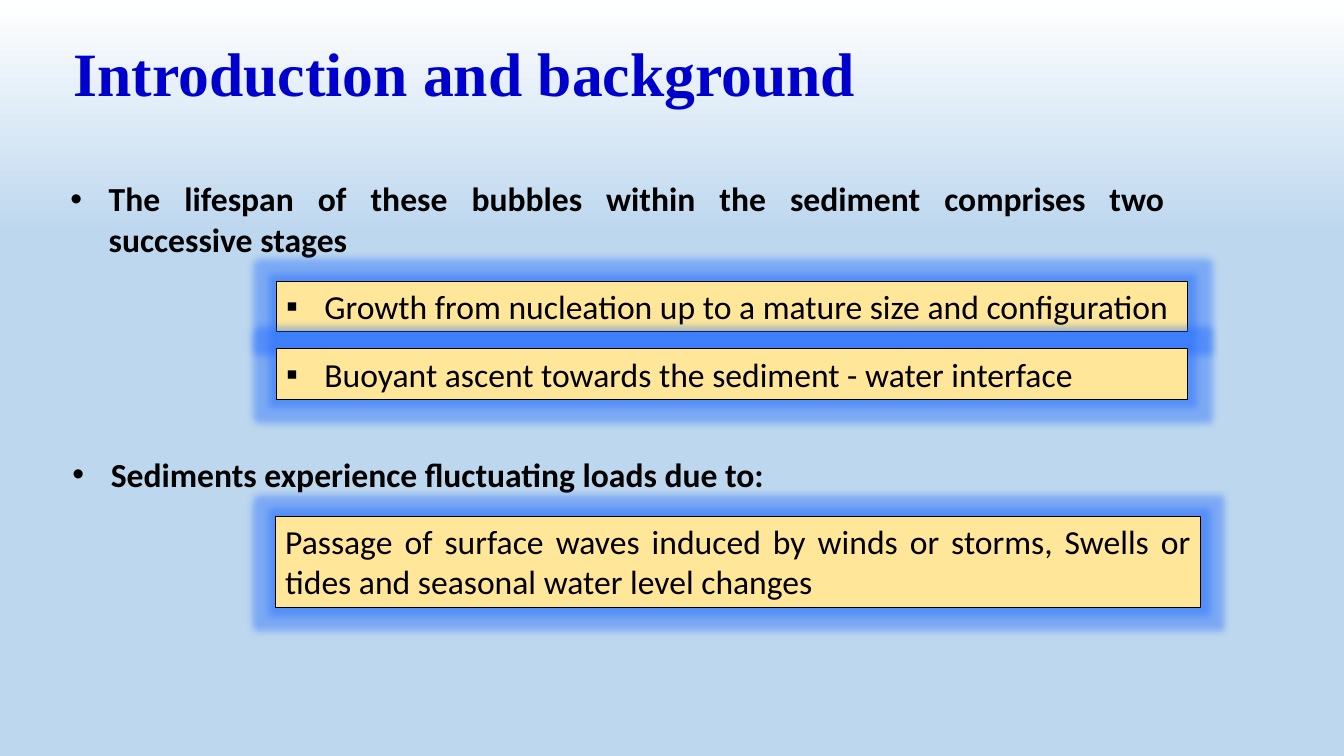
from lxml.etree import SubElement
from pptx import Presentation
from pptx.dml.color import RGBColor
from pptx.enum.shapes import MSO_SHAPE
from pptx.enum.text import MSO_ANCHOR, PP_ALIGN
from pptx.oxml.ns import qn
from pptx.util import Pt

EMU_PER_PX = 9144  # 100 px to the inch
BODY_SIZE = 24
BULLET_INDENT = 38
STAGE_TOP, STAGE_STEP = 279, 67
STAGES = [
    ("Growth from nucleation up to a mature size and configuration", PP_ALIGN.LEFT),
    ("Buoyant ascent towards the sediment - water interface", PP_ALIGN.JUSTIFY),
]


def px(length):
    return length * EMU_PER_PX


def color(hex_string):
    return RGBColor.from_string(hex_string)


def paint_background(page):
    fill = page.background.fill
    fill.gradient()
    fill.gradient_angle = 270
    for stop, (position, shade) in zip(fill.gradient_stops, [(0, "FFFFFF"), (0.31, "BDD7EE")]):
        stop.position = position
        stop.color.rgb = color(shade)


def add_bullet(para, symbol):
    properties = para._p.get_or_add_pPr()
    properties.set("marL", str(px(BULLET_INDENT)))
    properties.set("indent", str(-px(BULLET_INDENT)))
    SubElement(properties, qn("a:buFont"), typeface="Arial")
    SubElement(properties, qn("a:buChar"), char=symbol)


def write_text(box, text, size=BODY_SIZE, font="Calibri", shade="000000",
               bold=False, align=PP_ALIGN.JUSTIFY, bullet=None, anchor=MSO_ANCHOR.TOP):
    frame = box.text_frame
    frame.word_wrap = True
    frame.vertical_anchor = anchor
    para = frame.paragraphs[0]
    para.alignment = align
    if bullet:
        add_bullet(para, bullet)
    span = para.add_run()
    span.text = text
    span.font.size = Pt(size)
    span.font.name = font
    span.font.bold = bold
    span.font.color.rgb = color(shade)
    return para


def add_glow(box, radius, shade, opacity):
    effects = box._element.spPr.find(qn("a:effectLst"))
    glow = SubElement(effects, qn("a:glow"), rad=str(Pt(radius)))
    tint = SubElement(glow, qn("a:srgbClr"), val=shade)
    SubElement(tint, qn("a:alpha"), val=str(opacity * 1000))


def add_title(page, text):
    box = page.shapes.add_textbox(px(63), px(3), px(1150), px(145))
    para = write_text(box, text, size=44, font="Times New Roman", shade="0000CC",
                      bold=True, align=PP_ALIGN.LEFT, anchor=MSO_ANCHOR.MIDDLE)
    para.line_spacing = 0.9


def add_point(page, left, top, height, text):
    box = page.shapes.add_textbox(px(left), px(top), px(1105), px(height))
    write_text(box, text, bold=True, bullet="•")


def add_glowing_box(page, left, top, width, height, text, **style):
    box = page.shapes.add_shape(MSO_SHAPE.RECTANGLE, px(left), px(top), px(width), px(height))
    box.shadow.inherit = False
    box.fill.solid()
    box.fill.fore_color.rgb = color("FFE699")
    box.line.color.rgb = color("000000")
    box.line.width = Pt(0.75)
    add_glow(box, radius=11, shade="1A66FF", opacity=40)
    write_text(box, text, **style)


def main():
    deck = Presentation()
    deck.slide_width, deck.slide_height = px(1333), px(750)
    page = deck.slides.add_slide(deck.slide_layouts[6])
    paint_background(page)

    # Life of the bubbles
    add_point(page, 60, 172, 91, "The lifespan of these bubbles within the sediment "
                                 "comprises two successive stages")
    for index, (text, align) in enumerate(STAGES):
        add_glowing_box(page, 274, STAGE_TOP + index * STAGE_STEP, 904, 50,
                        text, align=align, bullet="▪")

    # Loads on the sediment
    add_point(page, 62, 445, 50, "Sediments experience fluctuating loads due to:")
    add_glowing_box(page, 273, 512, 918, 91,
                    "Passage of surface waves induced by winds or storms, "
                    "Swells or tides and seasonal water level changes")

    add_title(page, "Introduction and background")
    deck.save("out.pptx")


if __name__ == "__main__":
    main()
